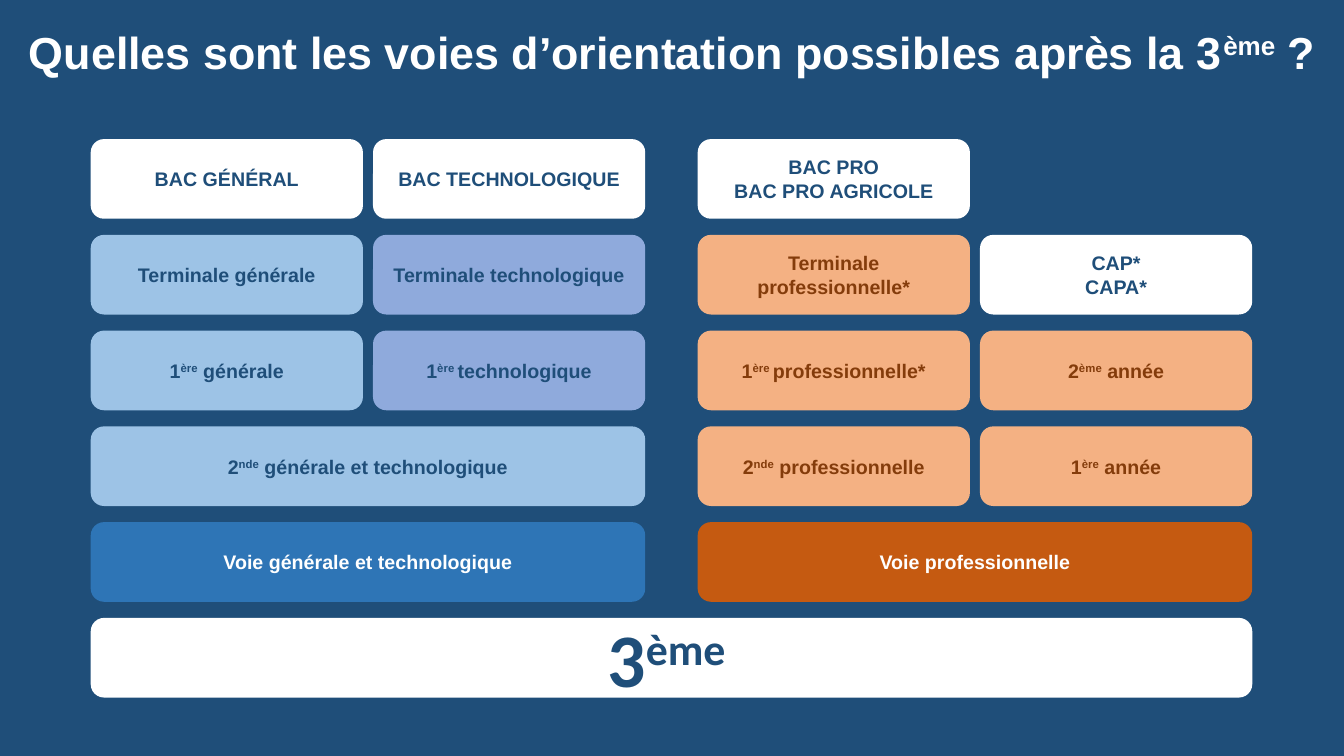
"""Build the slide of school paths open after the 3ème."""
from dataclasses import dataclass

import pptx
import pptx.dml.color
import pptx.enum.shapes
import pptx.enum.text
import pptx.slide
import pptx.text.text
import pptx.util

Inches = pptx.util.Inches


@dataclass(frozen=True)
class Theme:
    navy: str = "1F4E79"
    white: str = "FFFFFF"
    sky: str = "9DC3E6"
    lilac: str = "8FAADC"
    blue: str = "2E75B6"
    peach: str = "F4B183"
    rust: str = "C55A11"
    brown: str = "843C0B"
    font: str = "Arial"
    base_font: str = "Calibri"
    title: int = 32
    label: int = 14
    base: int = 54


@dataclass(frozen=True)
class Style:
    ink: str
    size: int
    font: str


@dataclass(frozen=True)
class Box:
    text: str
    row: int
    first: int
    last: int
    fill: str
    style: Style


THEME = Theme()
DARK = Style(THEME.navy, THEME.label, THEME.font)
WARM = Style(THEME.brown, THEME.label, THEME.font)
LIGHT = Style(THEME.white, THEME.label, THEME.font)
BASE = Style(THEME.navy, THEME.base, THEME.base_font)
HEAD = Style(THEME.white, THEME.title, THEME.font)

LEFTS = (0.9, 3.7, 6.92, 9.72)
WIDTH, HEIGHT = 2.7, 0.79
TOP, STEP = 1.38, 0.95

BOXES = (
    Box("BAC GÉNÉRAL", 0, 0, 0, THEME.white, DARK),
    Box("BAC TECHNOLOGIQUE", 0, 1, 1, THEME.white, DARK),
    Box("BAC PRO\nBAC PRO AGRICOLE", 0, 2, 2, THEME.white, DARK),
    Box("Terminale générale", 1, 0, 0, THEME.sky, DARK),
    Box("Terminale technologique", 1, 1, 1, THEME.lilac, DARK),
    Box("Terminale professionnelle*", 1, 2, 2, THEME.peach, WARM),
    Box("CAP*\nCAPA*", 1, 3, 3, THEME.white, DARK),
    Box("1^ère^ générale", 2, 0, 0, THEME.sky, DARK),
    Box("1^ère ^technologique", 2, 1, 1, THEME.lilac, DARK),
    Box("1^ère ^professionnelle*", 2, 2, 2, THEME.peach, WARM),
    Box("2^ème^ année", 2, 3, 3, THEME.peach, WARM),
    Box("2^nde^ générale et technologique", 3, 0, 1, THEME.sky, DARK),
    Box("2^nde^ professionnelle", 3, 2, 2, THEME.peach, WARM),
    Box("1^ère^ année", 3, 3, 3, THEME.peach, WARM),
    Box("Voie générale et technologique", 4, 0, 1, THEME.blue, LIGHT),
    Box("Voie professionnelle", 4, 2, 3, THEME.rust, LIGHT),
    Box("3^ème ^", 5, 0, 3, THEME.white, BASE),
)


def tint(code: str) -> pptx.dml.color.RGBColor:
    return pptx.dml.color.RGBColor.from_string(code)


def write(frame: pptx.text.text.TextFrame, text: str, style: Style) -> None:
    frame.word_wrap = True
    for line, words in enumerate(text.split("\n")):
        para = frame.add_paragraph() if line else frame.paragraphs[0]
        para.alignment = pptx.enum.text.PP_ALIGN.CENTER
        for part, piece in enumerate(words.split("^")):
            if not piece:
                continue
            run = para.add_run()
            run.text = piece
            run.font.name = style.font
            run.font.size = pptx.util.Pt(style.size)
            run.font.bold = True
            run.font.color.rgb = tint(style.ink)
            if part % 2:
                run._r.get_or_add_rPr().set("baseline", "30000")


def draw(slide: pptx.slide.Slide, box: Box) -> None:
    left = LEFTS[box.first]
    shape = slide.shapes.add_shape(
        pptx.enum.shapes.MSO_SHAPE.ROUNDED_RECTANGLE,
        Inches(left), Inches(TOP + box.row * STEP),
        Inches(LEFTS[box.last] + WIDTH - left), Inches(HEIGHT))
    shape.shadow.inherit = False
    shape.fill.solid()
    shape.fill.fore_color.rgb = tint(box.fill)
    shape.line.fill.background()
    shape.text_frame.vertical_anchor = pptx.enum.text.MSO_ANCHOR.MIDDLE
    write(shape.text_frame, box.text, box.style)


def main() -> None:
    deck = pptx.Presentation()
    deck.slide_width, deck.slide_height = Inches(13.33), Inches(7.5)
    slide = deck.slides.add_slide(deck.slide_layouts[5])
    slide.background.fill.solid()
    slide.background.fill.fore_color.rgb = tint(THEME.navy)

    title = slide.shapes.title
    title.left, title.top = Inches(0), Inches(0.19)
    title.width, title.height = Inches(13.33), Inches(0.64)
    frame = title.text_frame
    frame.vertical_anchor = pptx.enum.text.MSO_ANCHOR.TOP
    frame.auto_size = pptx.enum.text.MSO_AUTO_SIZE.SHAPE_TO_FIT_TEXT
    write(frame, "Quelles sont les voies d’orientation possibles après la 3^ème^ ?", HEAD)

    for box in BOXES:
        draw(slide, box)
    deck.save("out.pptx")


if __name__ == "__main__":
    main()
